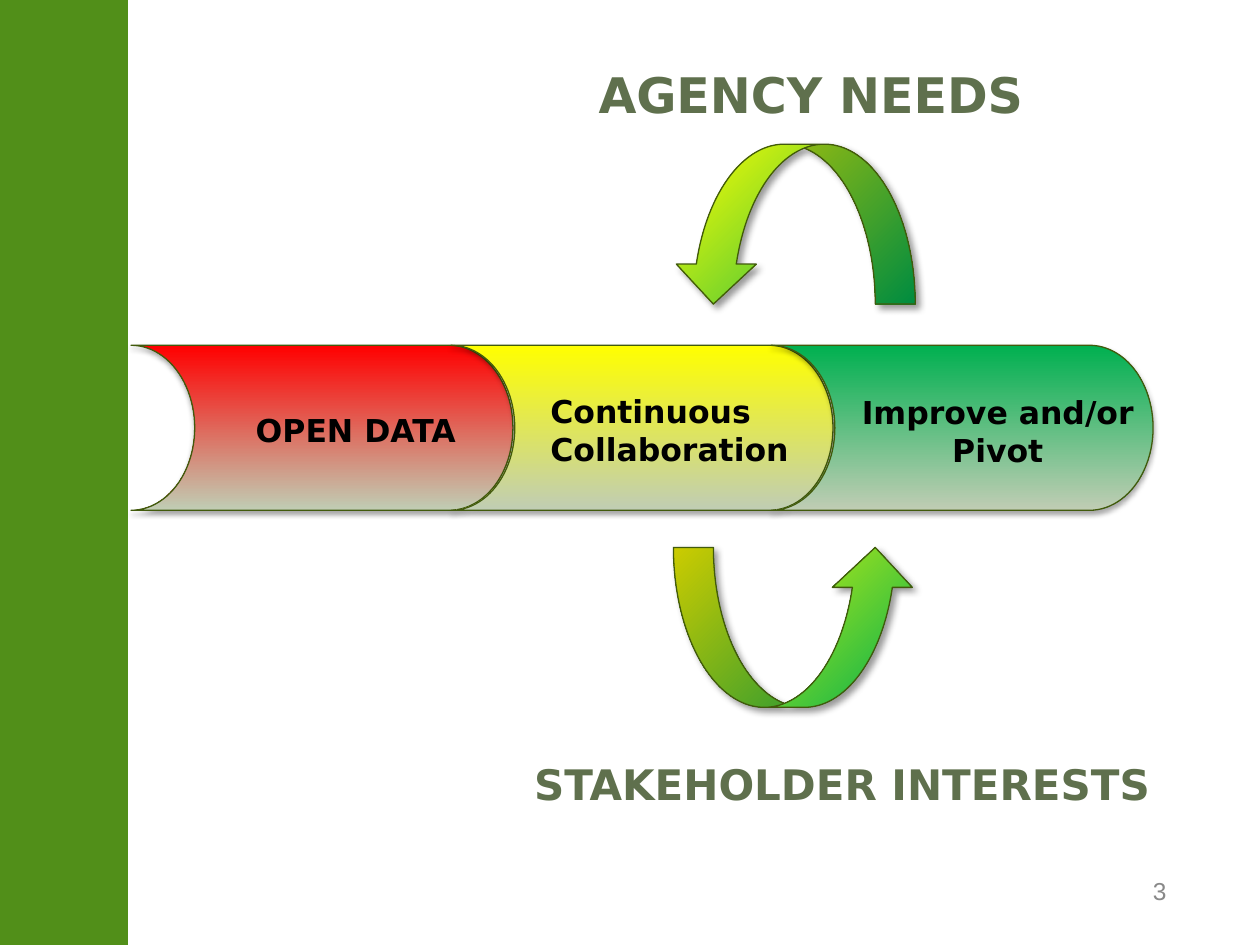
"""Build the open data collaboration cycle slide."""
from dataclasses import dataclass

from pptx import Presentation, util as u
from pptx.dml.color import RGBColor
from pptx.enum import shapes, text
from pptx.oxml import parse_xml
from pptx.oxml.ns import nsdecls

BAND_GREEN = RGBColor(0x51, 0x8F, 0x19)
OUTLINE_GREEN = RGBColor(0x41, 0x5A, 0x0C)
RED = RGBColor(0xFF, 0x00, 0x00)
YELLOW = RGBColor(0xFF, 0xFF, 0x00)
GREEN = RGBColor(0x00, 0xB0, 0x50)
SAGE = RGBColor(0xC0, 0xCD, 0xB4)
BLACK = RGBColor(0x00, 0x00, 0x00)
GREY = RGBColor(0x89, 0x89, 0x89)
HEADING_STOPS = (
    (0, RGBColor(0x82, 0x8E, 0x77)),
    (49, RGBColor(0x5F, 0x70, 0x4D)),
    (50, RGBColor(0x3A, 0x54, 0x02)),
    (92, RGBColor(0x33, 0x48, 0x05)),
    (100, RGBColor(0x32, 0x47, 0x05)),
)
STAGE_LEFT, STAGE_PITCH = 74.9, 182.9
LEFT, CENTER = text.PP_ALIGN.LEFT, text.PP_ALIGN.CENTER


@dataclass(frozen=True)
class Box:
    left: float
    top: float
    width: float
    height: float

    def lengths(self) -> list[u.Length]:
        return [u.Pt(value) for value in (self.left, self.top, self.width, self.height)]


@dataclass(frozen=True)
class Shadow:
    opacity: int
    blur: float
    distance: float
    direction: int


@dataclass(frozen=True)
class GradientShape:
    kind: shapes.MSO_SHAPE
    box: Box
    rotation: int
    start: RGBColor
    end: RGBColor
    angle: int
    shadow: Shadow


@dataclass(frozen=True)
class Label:
    lines: tuple[str, ...]
    box: Box
    size: int = 18
    alignment: text.PP_ALIGN = LEFT
    heading: bool = False


@dataclass(frozen=True)
class Stage:
    color: RGBColor
    label: Label


STAGE_SHADOW = Shadow(35, 3.1, 1.8, 90)
ARROW_SHADOW = Shadow(40, 4, 3, 45)
STAGES = (
    Stage(RED, Label(("OPEN DATA",), Box(139, 231.1, 133.2, 28.8))),
    Stage(YELLOW, Label(("Continuous", "Collaboration"), Box(307.4, 220.3, 151.2, 51.1))),
    Stage(GREEN, Label(("Improve and/or", "Pivot"), Box(480.2, 221, 180, 51.1),
                       alignment=CENTER)),
)
ARROWS = (
    GradientShape(shapes.MSO_SHAPE.CURVED_RIGHT_ARROW, Box(408.2, 59, 91.4, 138.2),
                  90, YELLOW, GREEN, 45, ARROW_SHADOW),
    GradientShape(shapes.MSO_SHAPE.CURVED_RIGHT_ARROW, Box(408.2, 289.4, 91.4, 138.2),
                  270, GREEN, YELLOW, 45, ARROW_SHADOW),
)
AGENCY = Label(("AGENCY NEEDS",), Box(334.8, 33.1, 259.9, 41), 28, heading=True)
STAKEHOLDERS = Label(("STAKEHOLDER INTERESTS",), Box(298.1, 429.8, 375.8, 36), 24, heading=True)


def add_shadow(shape, shadow: Shadow) -> None:
    shape.shadow.inherit = False
    effects = shape._element.spPr.find(
        "{http://schemas.openxmlformats.org/drawingml/2006/main}effectLst")
    effects.append(parse_xml(
        f'<a:outerShdw {nsdecls("a")} blurRad="{u.Pt(shadow.blur)}" '
        f'dist="{u.Pt(shadow.distance)}" dir="{shadow.direction * 60000}" rotWithShape="0">'
        f'<a:srgbClr val="{BLACK}"><a:alpha val="{shadow.opacity * 1000}"/></a:srgbClr>'
        '</a:outerShdw>'))


def add_gradient_shape(slide, item: GradientShape) -> None:
    shape = slide.shapes.add_shape(item.kind, *item.box.lengths())
    shape.rotation = item.rotation
    shape.fill.gradient()
    shape.fill.gradient_angle = item.angle
    for stop, color, position in zip(
            shape.fill.gradient_stops, (item.start, item.end), (0, 1)):
        stop.color.rgb = color
        stop.position = position
    shape.line.color.rgb = OUTLINE_GREEN
    shape.line.width = u.Pt(0.75)
    add_shadow(shape, item.shadow)


def fill_heading(run) -> None:
    stops = "".join(
        f'<a:gs pos="{position * 1000}"><a:srgbClr val="{color}"/></a:gs>'
        for position, color in HEADING_STOPS)
    run._r.get_or_add_rPr().insert(0, parse_xml(
        f'<a:gradFill {nsdecls("a")}><a:gsLst>{stops}</a:gsLst>'
        '<a:lin ang="5400000" scaled="0"/></a:gradFill>'))


def write_label(shape, label: Label) -> None:
    shape.left, shape.top, shape.width, shape.height = label.box.lengths()
    frame = shape.text_frame
    frame.word_wrap = False
    frame.auto_size = text.MSO_AUTO_SIZE.SHAPE_TO_FIT_TEXT
    frame.vertical_anchor = text.MSO_ANCHOR.TOP
    for index, line in enumerate(label.lines):
        paragraph = frame.add_paragraph() if index else frame.paragraphs[0]
        paragraph.alignment = label.alignment
        run = paragraph.add_run()
        run.text = line
        run.font.name = "DejaVu Sans"
        run.font.size = u.Pt(label.size)
        run.font.bold = True
        if label.heading:
            fill_heading(run)
        else:
            run.font.color.rgb = BLACK


def add_label(slide, label: Label) -> None:
    write_label(slide.shapes.add_textbox(*label.box.lengths()), label)


def add_side_band(slide) -> None:
    shape = slide.shapes.add_shape(
        shapes.MSO_SHAPE.RECTANGLE, *Box(-1.4, 0, 74.2, 540).lengths())
    shape.shadow.inherit = False
    shape.fill.solid()
    shape.fill.fore_color.rgb = BAND_GREEN
    shape.line.color.rgb = BAND_GREEN
    shape.line.width = u.Pt(0.75)


def add_page_number(slide) -> None:
    frame = slide.shapes.add_textbox(*Box(627.1, 498.2, 71.3, 21.6).lengths()).text_frame
    frame.word_wrap = True
    frame.margin_left = frame.margin_right = 0
    frame.vertical_anchor = text.MSO_ANCHOR.MIDDLE
    paragraph = frame.paragraphs[0]
    paragraph.alignment = CENTER
    run = paragraph.add_run()
    run.text = "3"
    run.font.name = "Arial"
    run.font.size = u.Pt(14)
    run.font.color.rgb = GREY


def main() -> None:
    presentation = Presentation()
    presentation.slide_width, presentation.slide_height = u.Pt(720), u.Pt(540)
    slide = presentation.slides.add_slide(presentation.slide_layouts[5])
    add_side_band(slide)
    add_page_number(slide)
    for index, stage in enumerate(STAGES):
        box = Box(STAGE_LEFT + index * STAGE_PITCH, 197.3, 218.2, 94.3)
        add_gradient_shape(slide, GradientShape(
            shapes.MSO_SHAPE.FLOWCHART_STORED_DATA, box, 180, stage.color, SAGE, 90,
            STAGE_SHADOW))
    for stage in STAGES:
        add_label(slide, stage.label)
    for arrow in ARROWS:
        add_gradient_shape(slide, arrow)
    write_label(slide.shapes.title, AGENCY)
    add_label(slide, STAKEHOLDERS)
    presentation.save("out.pptx")


if __name__ == "__main__":
    main()
